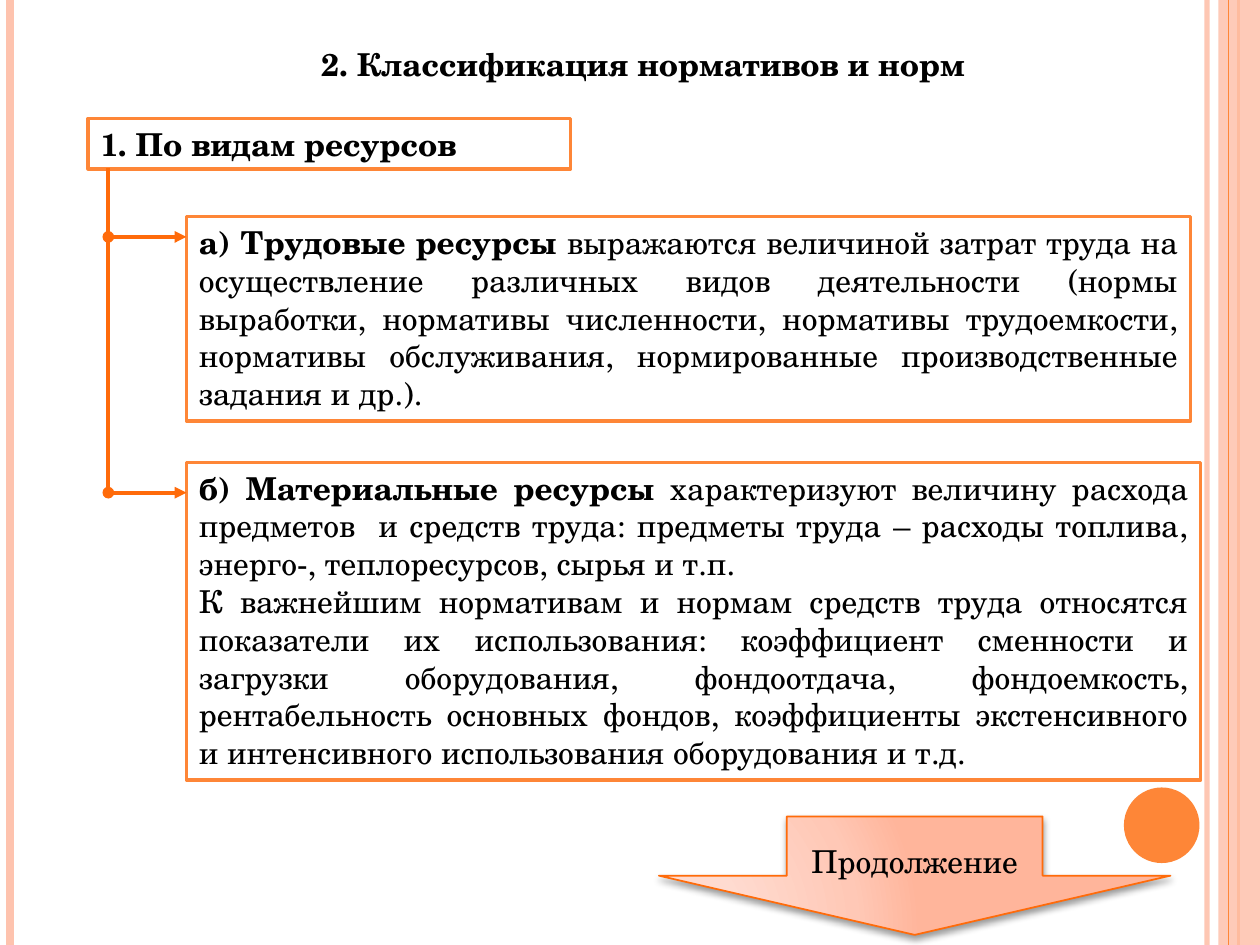
"""Builds the slide on the classification of norms and standards."""
from dataclasses import dataclass

import pptx
import pptx.dml.color
import pptx.enum.shapes
import pptx.enum.text
import pptx.oxml
import pptx.oxml.ns
import pptx.util
from lxml import etree

EMU_PER_PX = 9144
SHAPES = pptx.enum.shapes.MSO_SHAPE
ALIGN = pptx.enum.text.PP_ALIGN
ANCHOR = pptx.enum.text.MSO_ANCHOR
qn = pptx.oxml.ns.qn


@dataclass(frozen=True)
class Theme:
    """Colours, font and type size of the slide."""

    font: str = "TeX Gyre Schola"
    size: int = 18
    text: str = "000000"
    paper: str = "FFFFFF"
    accent: str = "FE8637"
    strong: str = "FF6B0A"
    pale: str = "FEC3AE"
    arrow_stops: tuple = ((0, "FFDED5"), (30, "FFDBD0"), (75, "FFC8B6"), (100, "FFB59B"))


def px(length):
    """Turn pixels into EMU."""
    return pptx.util.Emu(length * EMU_PER_PX)


def rgb(colour):
    """Turn a hex string into a colour."""
    return pptx.dml.color.RGBColor.from_string(colour)


def set_opacity(properties, percent):
    """Set the opacity of the first colour found."""
    colour = next(properties.iter(qn("a:srgbClr")))
    etree.SubElement(colour, qn("a:alpha"), val=str(percent * 1000))


class SlideBuilder:
    """Draws styled elements on the current slide."""

    def __init__(self, page, theme):
        """Keep the slide and its style."""
        self.page = page
        self.theme = theme

    def set_text(self, frame, paragraphs, align):
        """Fill a text frame with paragraphs of (bold lead, plain text)."""
        for index, (lead, plain) in enumerate(paragraphs):
            para = frame.add_paragraph() if index else frame.paragraphs[0]
            para.alignment = align
            para.font.name = self.theme.font
            para.font.size = pptx.util.Pt(self.theme.size)
            para.font.color.rgb = rgb(self.theme.text)
            for words, bold in ((lead, True), (plain, False)):
                if words:
                    span = para.add_run()
                    span.text = words
                    span.font.bold = bold

    def title(self, text, *bounds):
        """Place the title placeholder."""
        box = self.page.shapes.title
        box.left, box.top, box.width, box.height = map(px, bounds)
        frame = box.text_frame
        frame.word_wrap = False
        frame.auto_size = pptx.enum.text.MSO_AUTO_SIZE.SHAPE_TO_FIT_TEXT
        frame.vertical_anchor = ANCHOR.TOP
        self.set_text(frame, [(text, "")], ALIGN.CENTER)

    def text_box(self, paragraphs, *bounds, align=ALIGN.JUSTIFY):
        """Add a framed text box."""
        box = self.page.shapes.add_textbox(*map(px, bounds))
        box.fill.solid()
        box.fill.fore_color.rgb = rgb(self.theme.paper)
        box.line.color.rgb = rgb(self.theme.accent)
        box.line.width = pptx.util.Pt(2)
        box.text_frame.word_wrap = True
        box.text_frame.auto_size = pptx.enum.text.MSO_AUTO_SIZE.SHAPE_TO_FIT_TEXT
        self.set_text(box.text_frame, paragraphs, align)

    def shape(self, kind, colour, *bounds, opacity=100):
        """Add a flat shape without outline."""
        shape = self.page.shapes.add_shape(kind, *map(px, bounds))
        shape.shadow.inherit = False
        shape.fill.solid()
        shape.fill.fore_color.rgb = rgb(colour)
        shape.line.fill.background()
        if opacity < 100:
            set_opacity(shape._element.spPr, opacity)
        return shape

    def line(self, colour, width, *ends, opacity=100, arrow=False):
        """Add a straight line, with a dot and an arrowhead if asked."""
        straight = pptx.enum.shapes.MSO_CONNECTOR.STRAIGHT
        line = self.page.shapes.add_connector(straight, *map(px, ends))
        line.line.color.rgb = rgb(colour)
        line.line.width = pptx.util.Pt(width)
        properties = line._element.spPr
        outline = properties.find(qn("a:ln"))
        if opacity < 100:
            set_opacity(outline, opacity)
        if arrow:
            etree.SubElement(outline, qn("a:headEnd"), type="oval")
            etree.SubElement(outline, qn("a:tailEnd"), type="triangle")
        etree.SubElement(properties, qn("a:effectLst"))

    def block_arrow(self, text, *bounds):
        """Add a down arrow with a gradient and a soft shadow."""
        arrow = self.shape(SHAPES.DOWN_ARROW, self.theme.pale, *bounds)
        arrow.line.color.rgb = rgb(self.theme.strong)
        arrow.line.width = pptx.util.Pt(1)
        stops = "".join(
            f'<a:gs pos="{place * 1000}"><a:srgbClr val="{colour}"/></a:gs>'
            for place, colour in self.theme.arrow_stops
        )
        namespace = pptx.oxml.ns.nsdecls("a")
        gradient = pptx.oxml.parse_xml(
            f'<a:gradFill {namespace} rotWithShape="1"><a:gsLst>{stops}</a:gsLst>'
            '<a:path path="circle"><a:fillToRect l="5000" t="100000" r="120000" b="10000"/>'
            "</a:path></a:gradFill>"
        )
        properties = arrow._element.spPr
        properties.replace(properties.find(qn("a:solidFill")), gradient)
        shadow = pptx.oxml.parse_xml(
            f'<a:outerShdw {namespace} blurRad="50800" dist="25400" dir="5400000" '
            f'rotWithShape="0"><a:srgbClr val="{self.theme.text}"><a:alpha val="40000"/>'
            "</a:srgbClr></a:outerShdw>"
        )
        properties.find(qn("a:effectLst")).append(shadow)
        arrow.text_frame.vertical_anchor = ANCHOR.MIDDLE
        self.set_text(arrow.text_frame, [("", text)], ALIGN.CENTER)


def main():
    """Build and save the deck."""
    theme = Theme()
    deck = pptx.Presentation()
    deck.slide_width, deck.slide_height = px(1000), px(750)
    page = deck.slides.add_slide(deck.slide_layouts[5])
    slide = SlideBuilder(page, theme)

    slide.line(theme.pale, 3, 958, 0, 958, 750, opacity=93)
    slide.line(theme.pale, 4.5, 8, 0, 8, 750)
    slide.line(theme.accent, 1.5, 983, 0, 983, 750)
    slide.shape(SHAPES.RECTANGLE, theme.pale, 967, 0, 33, 750, opacity=87)
    slide.line(theme.accent, 0.75, 975, 0, 975, 750)
    slide.shape(SHAPES.OVAL, theme.accent, 892, 625, 60, 60)

    slide.title("2. Классификация нормативов и норм", 242, 31, 537, 40)
    slide.text_box([("1. По видам ресурсов", "")], 70, 94, 383, 40, align=ALIGN.LEFT)
    labour = (
        "выражаются величиной затрат труда на осуществление различных видов "
        "деятельности (нормы выработки, нормативы численности, нормативы "
        "трудоемкости, нормативы обслуживания, нормированные производственные "
        "задания и др.)."
    )
    slide.text_box([("а) Трудовые ресурсы ", labour)], 148, 172, 797, 162)
    materials = (
        "характеризуют величину расхода предметов  и средств труда: предметы "
        "труда – расходы топлива, энерго-, теплоресурсов, сырья и т.п."
    )
    equipment = (
        "К важнейшим нормативам и нормам средств труда относятся показатели их "
        "использования: коэффициент сменности и загрузки оборудования, "
        "фондоотдача, фондоемкость, рентабельность основных фондов, коэффициенты "
        "экстенсивного и интенсивного использования оборудования и т.д."
    )
    slide.text_box(
        [("б) Материальные ресурсы ", materials), ("", equipment)], 148, 367, 805, 252
    )

    trunk, branch_end, last_branch = 86, 148, 391
    slide.line(theme.strong, 2.25, trunk, 133, trunk, last_branch)
    for height in (last_branch, 188):
        slide.line(theme.strong, 2.25, trunk, height, branch_end, height, arrow=True)
    slide.block_arrow("Продолжение", 523, 648, 406, 94)
    deck.save("out.pptx")


if __name__ == "__main__":
    main()
